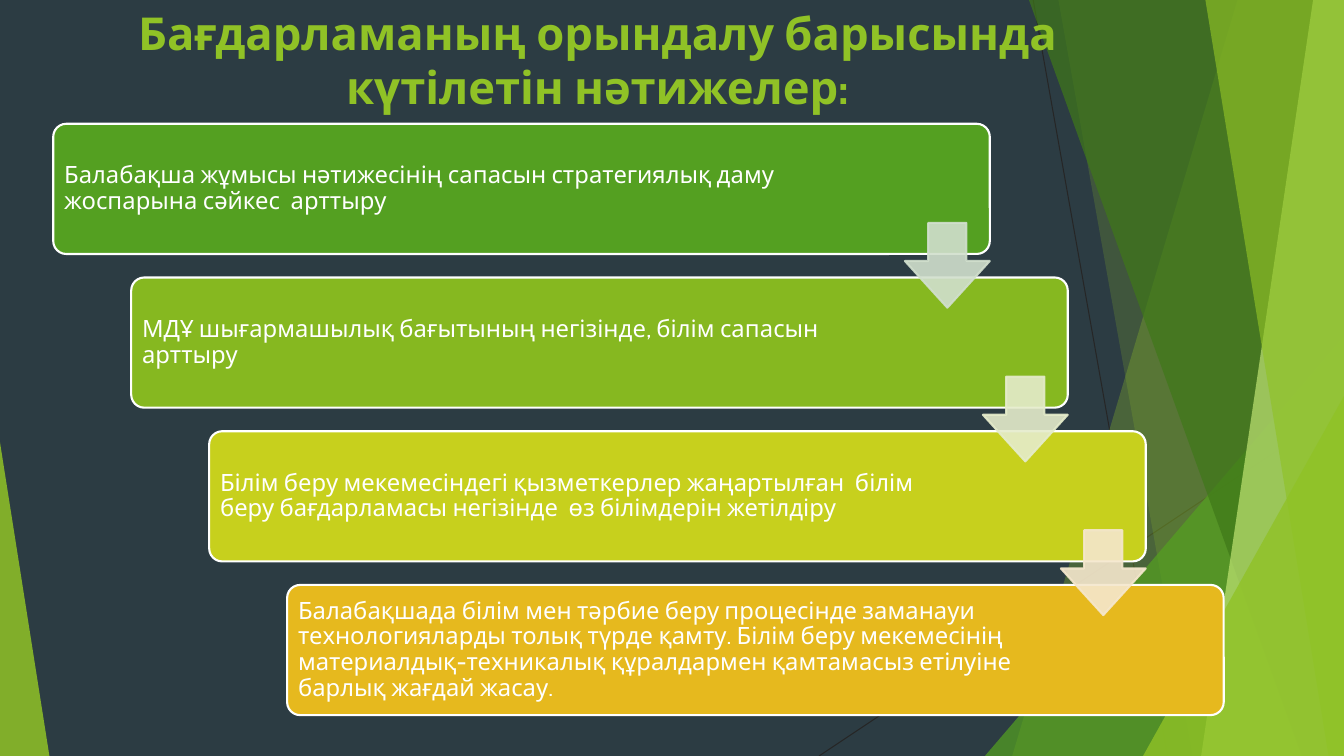
import lxml.etree
import pptx
import pptx.dml.color
import pptx.enum.shapes
import pptx.enum.text
import pptx.oxml.ns
import pptx.util

Pt = pptx.util.Pt
SHAPES = pptx.enum.shapes.MSO_SHAPE
ANCHORS = pptx.enum.text.MSO_ANCHOR
FONT = "Cabin"
WIDTH, HEIGHT = 960, 540

TITLE = "Бағдарламаның орындалу барысында күтілетін нәтижелер:"
RESULTS = [
    ("Балабақша жұмысы нәтижесінің сапасын стратегиялық даму жоспарына сәйкес  арттыру", "54A021", "D1DFCD", 561),
    ("МДҰ шығармашылық бағытының негізінде, білім сапасын арттыру", "86B820", "E5ECCB", 548),
    ("Білім беру мекемесіндегі қызметкерлер жаңартылған  білім беру бағдарламасы негізінде  өз білімдерін жетілдіру", "C7D01D", "F5E7CD", 548),
    ("Балабақшада білім мен тәрбие беру процесінде заманауи технологияларды толық түрде қамту. Білім беру мекемесінің материалдық-техникалық құралдармен қамтамасыз етілуіне барлық жағдай жасау.", "E6B91E", None, 548),
]

RAYS = [(738, 0, 834, HEIGHT), (WIDTH, 290, 585, HEIGHT)]
FACETS = [
    ("band", (884, 723), "90C226", 30),
    ("band", (756, 852), "90C226", 20),
    ("corner", (703.5, 240, 256.5, 300, 1), "54A021", 72),
    ("band", (735, 930), "3F7819", 70),
    ("band", (938, 858), "C0E474", 70),
    ("band", (861, 949), "90C226", 65),
    ("corner", (816.5, 283, 143.5, 257, 1), "90C226", 80),
    ("corner", (0, 316, 35.3, 224, 0), "90C226", 85),
]

STEP_LEFT, STEP_TOP, STEP_WIDTH, STEP_HEIGHT = 38, 88.4, 669, 93
SHIFT_X, SHIFT_Y = 55.7, 109.8
ARROW_SIZE, ARROW_DROP = 60.6, 70.8


def paint(color_format, color, opacity=100):
    color_format.solid()
    color_format.fore_color.rgb = pptx.dml.color.RGBColor.from_string(color)
    if opacity < 100:
        tag = pptx.oxml.ns.qn("a:srgbClr")
        for node in color_format._xPr.iter(tag):
            if node.getparent().getparent() is color_format._xPr:
                alpha = lxml.etree.SubElement(node, pptx.oxml.ns.qn("a:alpha"))
                alpha.set("val", str(opacity * 1000))


def style(shape, fill, opacity=100, outline=None):
    shape.shadow.inherit = False
    paint(shape.fill, fill, opacity)
    if outline:
        paint(shape.line.fill, outline, opacity)
        shape.line.width = Pt(1.5)
    else:
        shape.line.fill.background()


def preset(kind, left, top, width, height, adjustments):
    shape = slide.shapes.add_shape(kind, Pt(left), Pt(top), Pt(width), Pt(height))
    for index, value in enumerate(adjustments):
        shape.adjustments[index] = value
    return shape


def write(text, left, top, width, height, size, color, anchor, inset):
    box = slide.shapes.add_textbox(Pt(left), Pt(top), Pt(width), Pt(height))
    frame = box.text_frame
    frame.word_wrap = True
    frame.vertical_anchor = anchor
    frame.margin_left = frame.margin_right = Pt(inset[0])
    frame.margin_top = frame.margin_bottom = Pt(inset[1])
    paragraph = frame.paragraphs[0]
    run = paragraph.add_run()
    run.text = text
    run.font.name = FONT
    run.font.size = Pt(size)
    paint(run.font.fill, color)
    return paragraph, run


deck = pptx.Presentation()
deck.slide_width, deck.slide_height = Pt(WIDTH), Pt(HEIGHT)
slide = deck.slides.add_slide(deck.slide_layouts[6])
paint(slide.background.fill, "2C3C43")

for ends in RAYS:
    ray = slide.shapes.add_connector(
        pptx.enum.shapes.MSO_CONNECTOR.STRAIGHT, *[Pt(end) for end in ends])
    paint(ray.line.fill, "262626")
    ray.line.width = Pt(0.75)
    lxml.etree.SubElement(ray._element.spPr, pptx.oxml.ns.qn("a:effectLst"))

for kind, geometry, color, opacity in FACETS:
    if kind == "band":
        top_x, bottom_x = geometry
        outline = slide.shapes.build_freeform(top_x, 0, scale=Pt(1))
        outline.add_line_segments([(WIDTH, 0), (WIDTH, HEIGHT), (bottom_x, HEIGHT)])
        facet = outline.convert_to_shape()
    else:
        facet = preset(SHAPES.ISOSCELES_TRIANGLE, *geometry[:4], geometry[4:])
    style(facet, color, opacity)

heading, heading_run = write(
    TITLE, 70, 0, 714, 80, 32.4, "90C226", ANCHORS.TOP, (7.2, 3.6))
heading.alignment = pptx.enum.text.PP_ALIGN.CENTER
heading_run.font.bold = True

for index, (result, color, arrow_color, text_width) in enumerate(RESULTS):
    left, top = STEP_LEFT + SHIFT_X * index, STEP_TOP + SHIFT_Y * index
    step = preset(SHAPES.ROUNDED_RECTANGLE, left, top, STEP_WIDTH, STEP_HEIGHT, [0.1])
    style(step, color, outline="FFFFFF")
    wording, wording_run = write(
        result, left + 2.7, top + 2.7, text_width, STEP_HEIGHT - 5.4,
        17, "FFFFFF", ANCHORS.MIDDLE, (5.1, 5.1))
    wording.line_spacing = 0.9

for index, (result, color, arrow_color, text_width) in enumerate(RESULTS):
    if arrow_color:
        arrow = preset(
            SHAPES.DOWN_ARROW,
            STEP_LEFT + SHIFT_X * index + STEP_WIDTH - ARROW_SIZE,
            STEP_TOP + SHIFT_Y * index + ARROW_DROP,
            ARROW_SIZE, ARROW_SIZE, [0.45, 0.55])
        style(arrow, arrow_color, 90, arrow_color)

deck.save("out.pptx")
